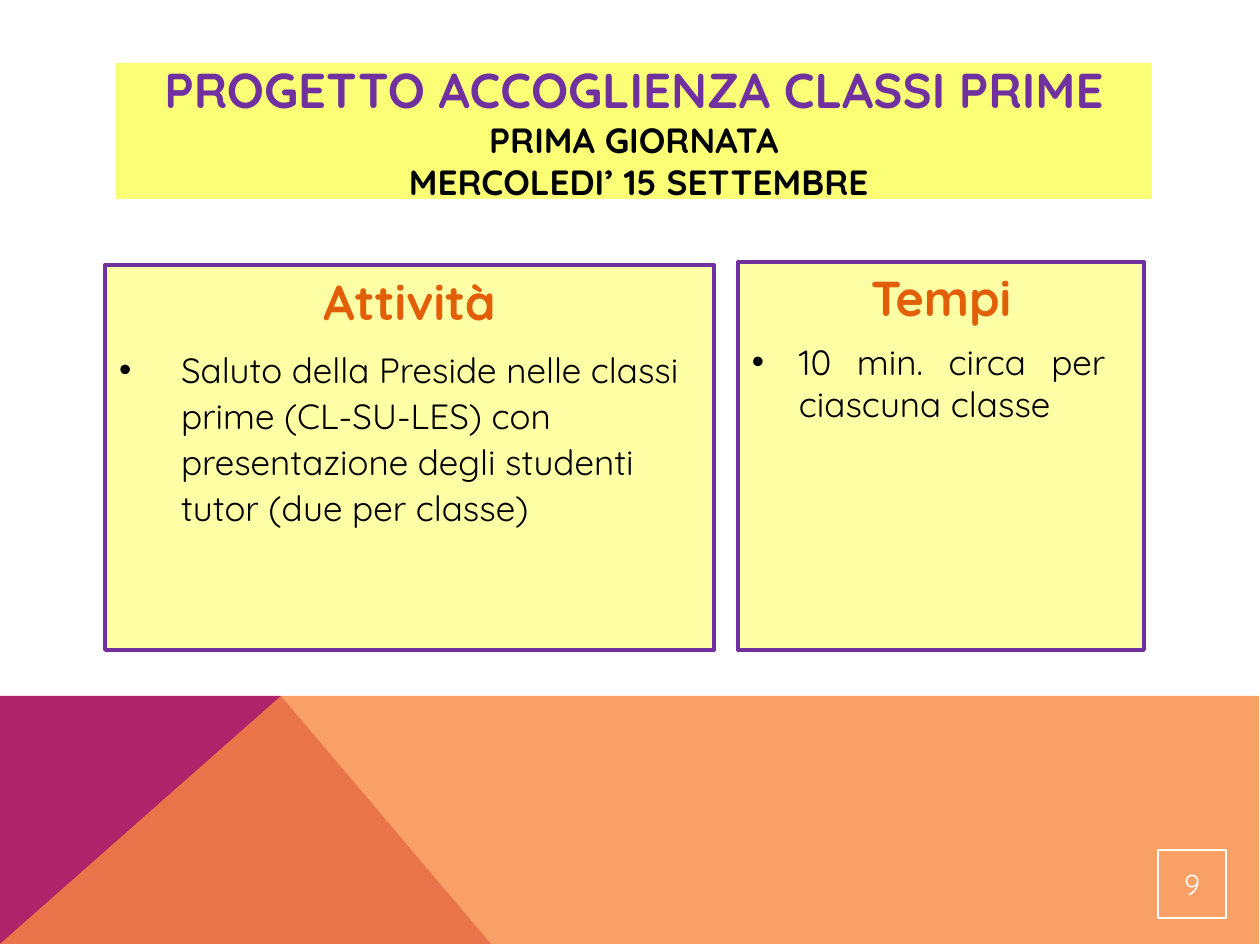
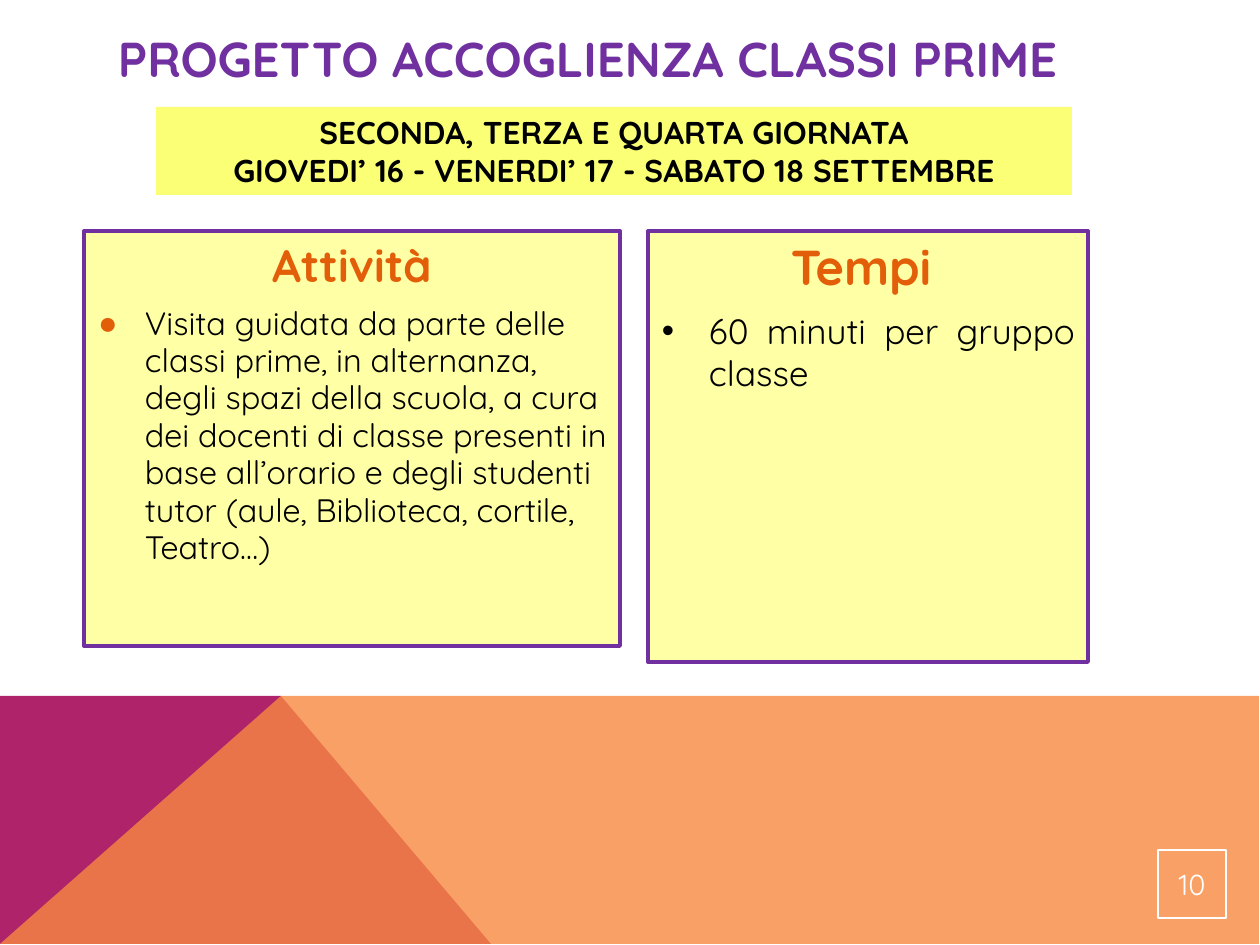
import pptx
import pptx.util
import pptx.dml.color
import pptx.enum.shapes
import pptx.enum.text
import pptx.oxml
import pptx.oxml.ns

PX = 914400 / 126
FONT = "Quicksand"
PURPLE, ORANGE, BLACK, WHITE = "7030A0", "E25E08", "000000", "FFFFFF"
BANNER, PANEL = "FAFF75", "FFFFA6"
MAGENTA, APRICOT = "AE236A", "F88941"
ALIGN = pptx.enum.text.PP_ALIGN
ANCHOR = pptx.enum.text.MSO_ANCHOR

# Content: boxes are (left, top, width, height) in px
TITLE = "PROGETTO ACCOGLIENZA CLASSI PRIME"
SLIDES = [
    {
        "number": "9",
        "title_in_banner": True,
        "banner": (116, 63, 1036, 136),
        "day": ["PRIMA GIORNATA", " MERCOLEDI’ 15 SETTEMBRE"],
        "day_size": 20,
        "panels": [
            {"box": (105, 265, 609, 385), "heading": "Attività", "heading_size": 28,
             "text": "Saluto della Preside nelle classi prime (CL-SU-LES) con "
                     "presentazione degli studenti tutor (due per classe)",
             "size": 20, "indent": 63, "spacing": 1.1},
            {"box": (738, 262, 406, 388), "heading": "Tempi", "heading_size": 28,
             "text": "10 min. circa per  ciascuna classe",
             "size": 20, "align": ALIGN.JUSTIFY},
        ],
    },
    {
        "number": "10",
        "title_in_banner": False,
        "banner": (156, 107, 916, 88),
        "day": ["SECONDA, TERZA E QUARTA GIORNATA",
                "GIOVEDI’ 16 - VENERDI’ 17 - SABATO 18 SETTEMBRE"],
        "day_size": 18,
        "panels": [
            {"box": (84, 231, 536, 415), "heading": "Attività", "heading_size": 25.9,
             "text": "Visita guidata da parte delle classi prime, in alternanza, "
                     "degli spazi della scuola, a cura dei docenti di classe presenti "
                     "in base all’orario e degli studenti tutor (aule, Biblioteca, "
                     "cortile, Teatro…)",
             "size": 18.5, "spacing": 0.96, "bullet": ("●", ORANGE)},
            {"box": (648, 231, 440, 431), "heading": "Tempi ", "heading_size": 28,
             "text": "60 minuti per gruppo classe",
             "size": 20, "align": ALIGN.JUSTIFY},
        ],
    },
]
TITLE_BOX = (105, 11, 1045, 94)
NUMBER_BOX = (1158, 850, 68, 68)
BANDS = [
    ([(0, 944), (0, 696), (281, 696), (491, 944)], MAGENTA, None),
    ([(0, 944), (281, 696), (1259, 696), (1259, 944)], APRICOT, 80),
]


def px(length):
    return pptx.util.Emu(round(length * PX))


def rgb(color):
    return pptx.dml.color.RGBColor.from_string(color)


def add_child(parent, tag, **attributes):
    child = pptx.oxml.parse_xml(f"<a:{tag} {pptx.oxml.ns.nsdecls('a')}/>")
    for name, value in attributes.items():
        child.set(name, value)
    parent.append(child)
    return child


def add_bands(slide):
    for points, color, opacity in BANDS:
        corners = [(px(x), px(y)) for x, y in points]
        builder = slide.shapes.build_freeform(*corners[0], scale=1.0)
        builder.add_line_segments(corners[1:], close=True)
        shape = builder.convert_to_shape()
        shape.shadow.inherit = False
        shape.fill.solid()
        shape.fill.fore_color.rgb = rgb(color)
        shape.line.fill.background()
        if opacity:
            fill = shape.fill._xPr.find(pptx.oxml.ns.qn("a:solidFill"))
            add_child(fill[0], "alpha", val=str(opacity * 1000))


def add_box(slide, box, fill=None, line=None, line_width=2.25,
            anchor=ANCHOR.TOP, insets=(13, 6)):
    """Add a rectangle, or a text box when there is no fill or line."""
    place = [px(length) for length in box]
    if fill or line:
        shape = slide.shapes.add_shape(pptx.enum.shapes.MSO_SHAPE.RECTANGLE, *place)
        shape.shadow.inherit = False
    else:
        shape = slide.shapes.add_textbox(*place)
    if fill:
        shape.fill.solid()
        shape.fill.fore_color.rgb = rgb(fill)
    else:
        shape.fill.background()
    if line:
        shape.line.color.rgb = rgb(line)
        shape.line.width = pptx.util.Pt(line_width)
    else:
        shape.line.fill.background()
    frame = shape.text_frame
    frame.word_wrap = True
    frame.vertical_anchor = anchor
    frame.margin_left = frame.margin_right = px(insets[0])
    frame.margin_top = frame.margin_bottom = px(insets[1])
    return frame


def write(frame, text, size, color, bold=False, align=ALIGN.CENTER):
    """Fill the first paragraph if it is free, else add one."""
    paragraph = frame.paragraphs[0] if not frame.text else frame.add_paragraph()
    paragraph.text = text
    paragraph.alignment = align
    for run in paragraph.runs:
        run.font.name = FONT
        run.font.size = pptx.util.Pt(size)
        run.font.bold = bold
        run.font.color.rgb = rgb(color)
    return paragraph


def add_bullet(paragraph, character, color, indent):
    properties = paragraph._p.get_or_add_pPr()
    properties.set("marL", str(px(indent)))
    properties.set("indent", str(-px(indent - 1)))
    add_child(add_child(properties, "buClr"), "srgbClr", val=color)
    add_child(properties, "buFont", typeface="Arial")
    add_child(properties, "buChar", char=character)


def add_panel(slide, panel):
    frame = add_box(slide, panel["box"], PANEL, PURPLE)
    heading = write(frame, panel["heading"], panel["heading_size"], ORANGE, True)
    body = write(frame, panel["text"], panel["size"], BLACK,
                 align=panel.get("align", ALIGN.LEFT))
    heading.space_before = body.space_before = pptx.util.Pt(8)
    body.line_spacing = panel.get("spacing", 1.0)
    add_bullet(body, *panel.get("bullet", ("•", BLACK)), panel.get("indent", 48))


def add_slide(presentation, content):
    slide = presentation.slides.add_slide(presentation.slide_layouts[6])
    add_bands(slide)

    # Title and day banner
    banner = add_box(slide, content["banner"], BANNER, anchor=ANCHOR.MIDDLE)
    if content["title_in_banner"]:
        write(banner, TITLE, 28, PURPLE, True)
    else:
        title = add_box(slide, TITLE_BOX, anchor=ANCHOR.MIDDLE)
        write(title, TITLE, 28, PURPLE, True, ALIGN.LEFT)
    for day_line in content["day"]:
        write(banner, day_line, content["day_size"], BLACK, True)

    for panel in content["panels"]:
        add_panel(slide, panel)

    # Slide number
    number = add_box(slide, NUMBER_BOX, line=WHITE, line_width=1.5,
                     anchor=ANCHOR.MIDDLE, insets=(1, 1))
    write(number, content["number"], 16.5, WHITE)


def main():
    presentation = pptx.Presentation()
    presentation.slide_width, presentation.slide_height = px(1260), px(945)
    for content in SLIDES:
        add_slide(presentation, content)
    presentation.save("out.pptx")


if __name__ == "__main__":
    main()
